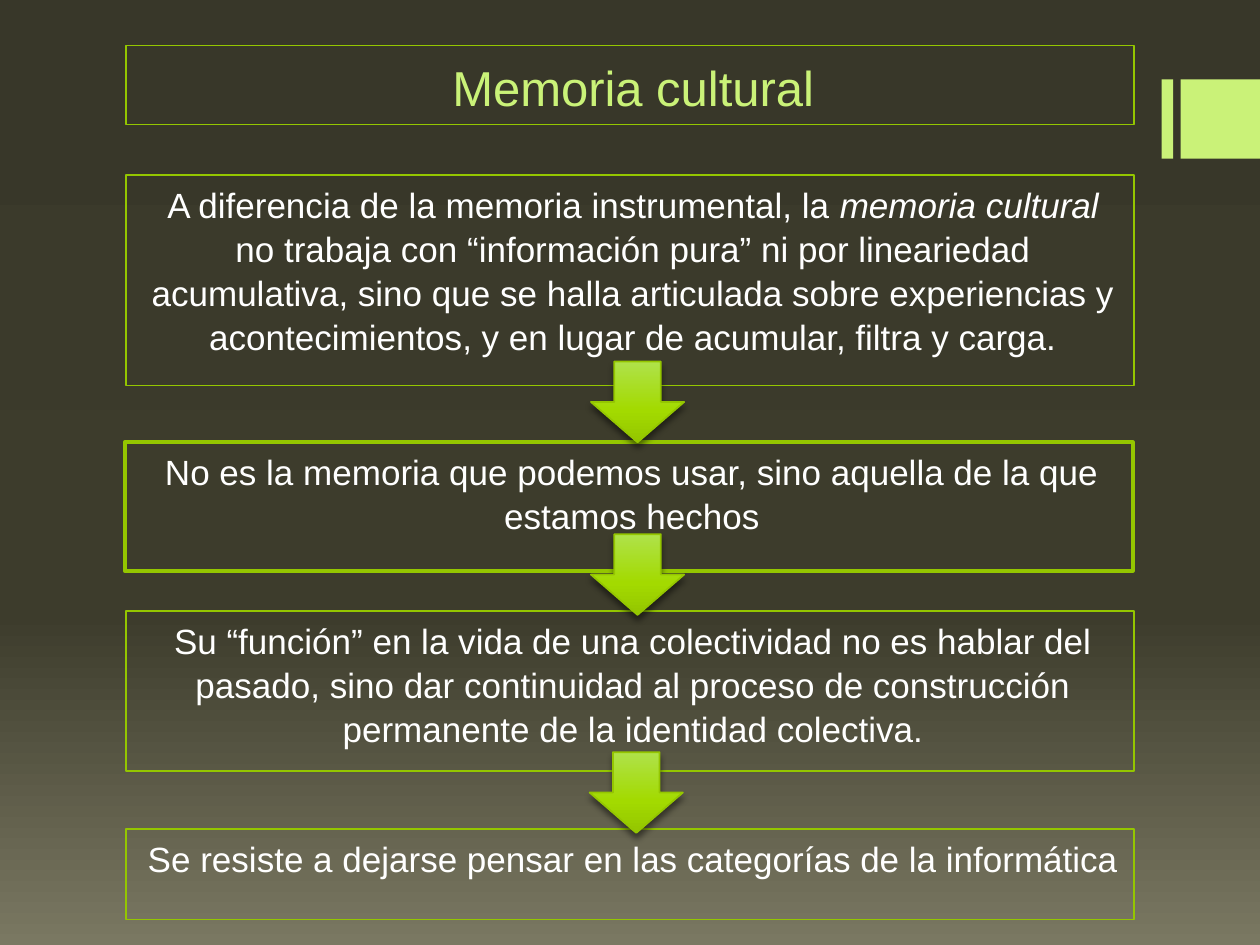
import pptx
import pptx.util
import pptx.dml.color
import pptx.enum.shapes
import pptx.enum.text
import pptx.oxml
import pptx.oxml.ns
import lxml.etree

RGB = pptx.dml.color.RGBColor
WHITE = RGB(0xFF, 0xFF, 0xFF)
PALE = RGB(0xCA, 0xF2, 0x78)
GREEN = RGB(0x94, 0xC6, 0x00)
NIGHT = [(0, RGB(0x38, 0x37, 0x29)), (65, RGB(0x3D, 0x3C, 0x2C)), (100, RGB(0x7A, 0x78, 0x62))]
LEAF = [(0, RGB(0xAF, 0xE2, 0x4A)), (60, RGB(0xA3, 0xDA, 0x00)), (100, GREEN)]
WIDE, HIGH = pptx.util.Inches(10), pptx.util.Inches(7.5)
COLS, ROWS = 100, 75
KIND = pptx.enum.shapes.MSO_SHAPE
ANCHOR = pptx.enum.text.MSO_ANCHOR

TITLE = (10, 3.6, 80, 6.3)
STEPS = [
    ((10, 13.9, 80, 16.7), 0.75, [
        ("A diferencia de la memoria instrumental, la ", False),
        ("memoria cultural ", True),
        ("no trabaja con “información pura” ni por lineariedad acumulativa, sino que se halla "
         "articulada sobre experiencias y acontecimientos, y en lugar de acumular, filtra y carga.", False)]),
    ((9.9, 35.1, 80, 10.2), 2.25, [
        ("No es la memoria que podemos usar, sino aquella de la que estamos hechos", False)]),
    ((10, 48.5, 80, 12.7), 0.75, [
        ("Su “función” en la vida de una colectividad no es hablar del pasado, sino dar "
         "continuidad al proceso de construcción permanente de la identidad colectiva.", False)]),
    ((10, 65.8, 80, 7.2), 0.75, [
        ("Se resiste a dejarse pensar en las categorías de la informática", False)]),
]
ARROWS = [(46.9, 28.7), (46.9, 42.4), (46.8, 59.7)]


def place(box):
    """Turn a box in grid columns and rows into slide lengths."""
    x, y, w, h = box
    return (round(WIDE * x / COLS), round(HIGH * y / ROWS),
            round(WIDE * w / COLS), round(HIGH * h / ROWS))


def blend(fill, root, stops):
    """Give a fill a downward gradient with any number of stops."""
    fill.gradient()
    fill.gradient_angle = 270
    tags = root.xpath(".//a:gsLst")[0]
    for old in list(tags):
        tags.remove(old)
    for pos, tint in stops:
        stop = lxml.etree.SubElement(tags, pptx.oxml.ns.qn("a:gs"), pos=str(pos * 1000))
        lxml.etree.SubElement(stop, pptx.oxml.ns.qn("a:srgbClr"), val=str(tint))


def write(shape, parts, size, tint, edge, anchor):
    """Frame a text shape and fill it with one centred paragraph."""
    shape.line.color.rgb = GREEN
    shape.line.width = pptx.util.Pt(edge)
    frame = shape.text_frame
    frame.word_wrap = True
    frame.auto_size = pptx.enum.text.MSO_AUTO_SIZE.NONE
    frame.vertical_anchor = anchor
    para = frame.paragraphs[0]
    para.alignment = pptx.enum.text.PP_ALIGN.CENTER
    para.line_spacing = 1.05
    props = para._p.get_or_add_pPr()
    props.set("marL", str(pptx.util.Inches(0.05)))
    props.set("indent", "0")
    for text, slant in parts:
        run = para.add_run()
        run.text = text
        run.font.name = "Arial"
        run.font.size = pptx.util.Pt(size)
        run.font.color.rgb = tint
        run.font.italic = slant


def head(slide, box):
    """Place the title in its frame."""
    shape = slide.shapes.title
    shape.left, shape.top, shape.width, shape.height = place(box)
    write(shape, [("Memoria cultural", False)], 28, PALE, 0.75, ANCHOR.MIDDLE)


def step(slide, box, edge, parts):
    """Place one framed statement."""
    shape = slide.shapes.add_textbox(*place(box))
    write(shape, parts, 20, WHITE, edge, ANCHOR.TOP)


def arrow(slide, box):
    """Place a glossy down arrow with a soft shadow."""
    shape = slide.shapes.add_shape(KIND.DOWN_ARROW, *place(box))
    blend(shape.fill, shape._element, LEAF)
    shape.line.color.rgb = GREEN
    shape.line.width = pptx.util.Pt(1)
    shape._element.spPr.append(pptx.oxml.parse_xml(
        f'<a:effectLst {pptx.oxml.ns.nsdecls("a")}>'
        f'<a:outerShdw blurRad="{pptx.util.Pt(3.8)}" dist="{pptx.util.Pt(3)}" dir="5400000" rotWithShape="0">'
        '<a:srgbClr val="000000"><a:alpha val="48000"/></a:srgbClr></a:outerShdw></a:effectLst>'))


def tab(slide, box):
    """Place the bar and block at the right edge."""
    x, y, w, h = box
    for left, wide in ((x, 0.9), (x + 1.5, w - 1.5)):
        shape = slide.shapes.add_shape(KIND.RECTANGLE, *place((left, y, wide, h)))
        shape.shadow.inherit = False
        shape.fill.solid()
        shape.fill.fore_color.rgb = PALE
        shape.line.fill.background()


def main():
    """Build the slide and save it."""
    deck = pptx.Presentation()
    deck.slide_width, deck.slide_height = WIDE, HIGH
    slide = deck.slides.add_slide(deck.slide_layouts[5])
    blend(slide.background.fill, slide._element, NIGHT)
    tab(slide, (92.2, 6.3, 7.8, 6.3))
    head(slide, TITLE)
    for box, edge, parts in STEPS:
        step(slide, box, edge, parts)
    for x, y in ARROWS:
        arrow(slide, (x, y, 7.4, 6.4))
    deck.save("out.pptx")


if __name__ == "__main__":
    main()
